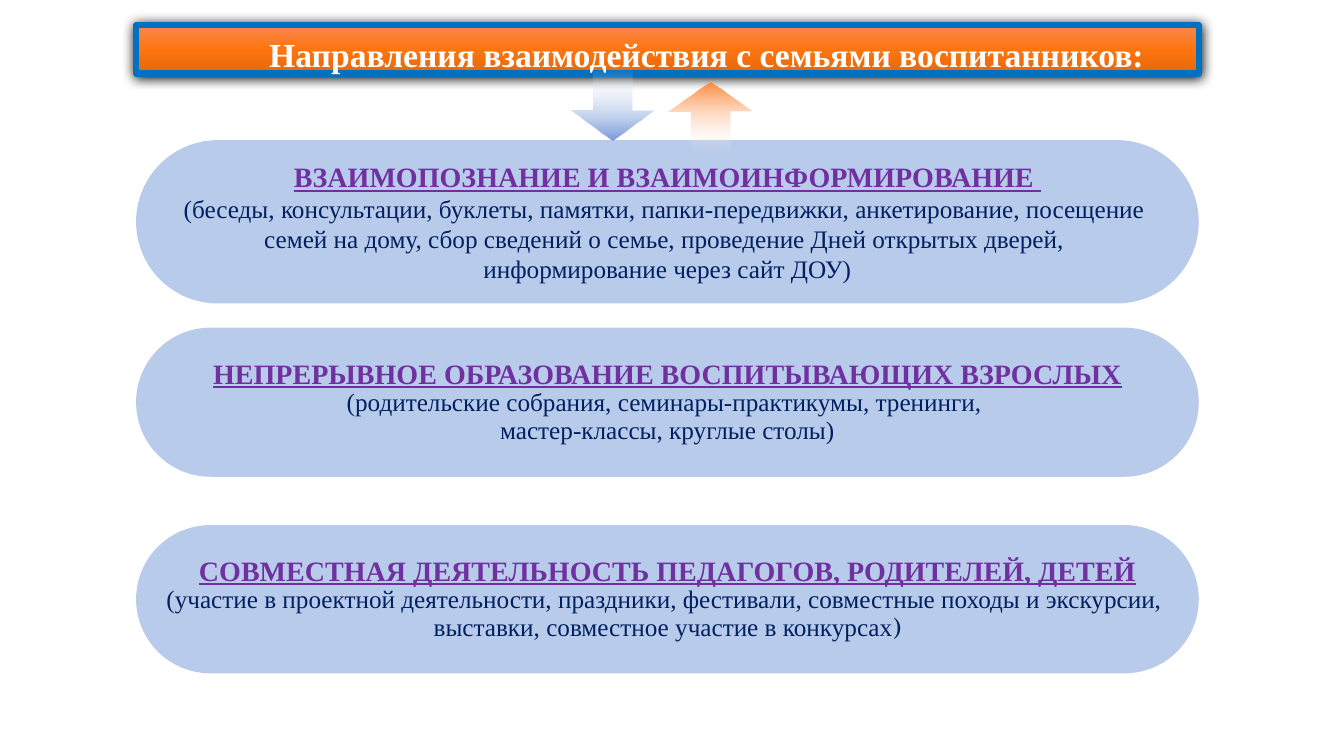
from lxml import etree
from pptx import Presentation
from pptx.dml.color import RGBColor
from pptx.enum.shapes import MSO_SHAPE
from pptx.enum.text import MSO_ANCHOR, MSO_AUTO_SIZE, PP_ALIGN
from pptx.oxml.ns import qn
from pptx.util import Inches, Pt

BAR = MSO_SHAPE.RECTANGLE
PANEL = MSO_SHAPE.ROUNDED_RECTANGLE
ARROW_UP, ARROW_DOWN = MSO_SHAPE.UP_ARROW, MSO_SHAPE.DOWN_ARROW
LEFT, CENTER = PP_ALIGN.LEFT, PP_ALIGN.CENTER
MIDDLE, BOTTOM = MSO_ANCHOR.MIDDLE, MSO_ANCHOR.BOTTOM
NO_FIT = MSO_AUTO_SIZE.NONE

COLUMNS, ROWS = 133.3, 75
PANEL_LEFT, PANEL_WIDTH = 13.5, 105.4
DOWNWARD, UPWARD = 270, 90

# top row, height in rows, line spacing, heading, details
DIRECTIONS = [
    (13.9, 16.2, 1.0, "ВЗАИМОПОЗНАНИЕ И ВЗАИМОИНФОРМИРОВАНИЕ ", [
        "(беседы, консультации, буклеты, памятки, папки-передвижки, анкетирование, посещение ",
        "семей на дому, сбор сведений о семье, проведение Дней открытых дверей, ",
        "информирование через сайт ДОУ)"]),
    (32.5, 14.8, 0.9, "НЕПРЕРЫВНОЕ ОБРАЗОВАНИЕ ВОСПИТЫВАЮЩИХ ВЗРОСЛЫХ", [
        "(родительские собрания, семинары-практикумы, тренинги, ",
        "мастер-классы, круглые столы)"]),
    (52.1, 14.7, 0.9, "СОВМЕСТНАЯ ДЕЯТЕЛЬНОСТЬ ПЕДАГОГОВ, РОДИТЕЛЕЙ, ДЕТЕЙ", [
        "(участие в проектной деятельности, праздники, фестивали, совместные походы и экскурсии, ",
        "выставки, совместное участие в конкурсах)"]),
]


def rgb(value):
    return RGBColor.from_string(value)


def add_color(parent, value, alpha=100):
    """Append an a:srgbClr with an opacity in percent."""
    color = etree.SubElement(parent, qn("a:srgbClr"), val=value)
    if alpha < 100:
        etree.SubElement(color, qn("a:alpha"), val=str(alpha * 1000))


class DirectionsSlide:
    font = "Times New Roman"
    closing_font = "TeX Gyre Schola"
    white, blue, orange = "FFFFFF", "7598D9", "FE8637"
    frame, heading, detail = "0070C0", "7030A0", "002060"

    def __init__(self, prs):
        self.column = prs.slide_width / COLUMNS
        self.row = prs.slide_height / ROWS
        self.slide = prs.slides.add_slide(prs.slide_layouts[5])

    def box(self, left, top, width, height):
        return (round(left * self.column), round(top * self.row),
                round(width * self.column), round(height * self.row))

    def shape(self, kind, *cells):
        shape = self.slide.shapes.add_shape(kind, *self.box(*cells))
        shape.shadow.inherit = False
        shape.line.fill.background()
        return shape

    def gradient(self, shape, angle, stops):
        """Fill with (position, colour, opacity) stops, angle counter-clockwise."""
        shape.fill.gradient()
        shape.fill.gradient_angle = angle
        stop_list = shape._element.spPr.find(".//" + qn("a:gsLst"))
        for stop in list(stop_list):
            stop_list.remove(stop)
        for position, color, alpha in stops:
            stop = etree.SubElement(stop_list, qn("a:gs"), pos=str(position * 1000))
            add_color(stop, color, alpha)

    def style(self, font, size, color, bold=False, underline=False):
        font.name = self.font
        font.size = Pt(size)
        font.color.rgb = rgb(color)
        font.bold = bold
        font.underline = underline

    def title_bar(self, *cells):
        bar = self.shape(BAR, *cells)
        self.gradient(bar, DOWNWARD, [
            (0, "F7874E", 100), (50, "FE750F", 100), (100, "E5680A", 100)])
        bar.line.color.rgb = rgb(self.frame)
        bar.line.width = Pt(4.5)
        effects = bar._element.spPr.find(qn("a:effectLst"))
        shadow = etree.SubElement(
            effects, qn("a:outerShdw"), blurRad=str(Pt(8.5)), dist=str(Pt(1)),
            dir="5400000", algn="ctr", rotWithShape="0")
        add_color(shadow, "000000")

    def title(self, text, indent, *cells):
        title = self.slide.shapes.title
        title.left, title.top, title.width, title.height = self.box(*cells)
        self.slide.shapes._spTree.append(title._element)  # in front of the bar
        frame = title.text_frame
        frame.auto_size = NO_FIT
        frame.word_wrap = True
        frame.vertical_anchor = BOTTOM
        frame.margin_left = round(indent * self.column)
        frame.text = text
        line = frame.paragraphs[0]
        line.alignment = LEFT
        line.line_spacing = 0.9
        self.style(line.font, 24, self.white, bold=True)

    def panel(self, top, height, spacing, heading, details):
        panel = self.shape(PANEL, PANEL_LEFT, top, PANEL_WIDTH, height)
        panel.adjustments[0] = 0.5
        panel.fill.solid()
        panel.fill.fore_color.rgb = rgb(self.blue)
        color = panel._element.spPr.find(qn("a:solidFill")).find(qn("a:srgbClr"))
        etree.SubElement(color, qn("a:alpha"), val="50000")
        frame = panel.text_frame
        frame.word_wrap = False
        frame.vertical_anchor = MIDDLE
        frame.text = "\n".join([heading, *details])
        for line in frame.paragraphs:
            line.alignment = CENTER
            line.line_spacing = spacing
            self.style(line.font, 18, self.detail)
        self.style(frame.paragraphs[0].font, 20, self.heading, bold=True, underline=True)
        return panel

    def closing_bracket(self, panel):
        """Set the last bracket of a panel in its own font."""
        line = panel.text_frame.paragraphs[-1]
        line.runs[0].text = line.text.removesuffix(")")
        bracket = line.add_run()
        bracket.text = ")"
        bracket.font.name = self.closing_font

    def arrow(self, kind, angle, color, *cells):
        arrow = self.shape(kind, *cells)
        arrow.adjustments[0] = 0.465
        arrow.adjustments[1] = 0.421
        self.gradient(arrow, angle, [(0, self.white, 0), (100, color, 100)])


def main():
    prs = Presentation()
    prs.slide_width, prs.slide_height = Inches(13.33), Inches(7.5)
    slide = DirectionsSlide(prs)
    slide.title_bar(PANEL_LEFT, 2.5, PANEL_WIDTH, 4.8)
    slide.title("Направления взаимодействия с семьями воспитанников:",
                21, 5.7, 2.6, 116.6, 5.3)
    panels = [slide.panel(*direction) for direction in DIRECTIONS]
    slide.closing_bracket(panels[-1])
    slide.arrow(ARROW_DOWN, DOWNWARD, slide.blue, 56.6, 6.7, 8.3, 7.2)
    slide.arrow(ARROW_UP, UPWARD, slide.orange, 66.3, 8.1, 8.3, 7)
    prs.save("out.pptx")


if __name__ == "__main__":
    main()
